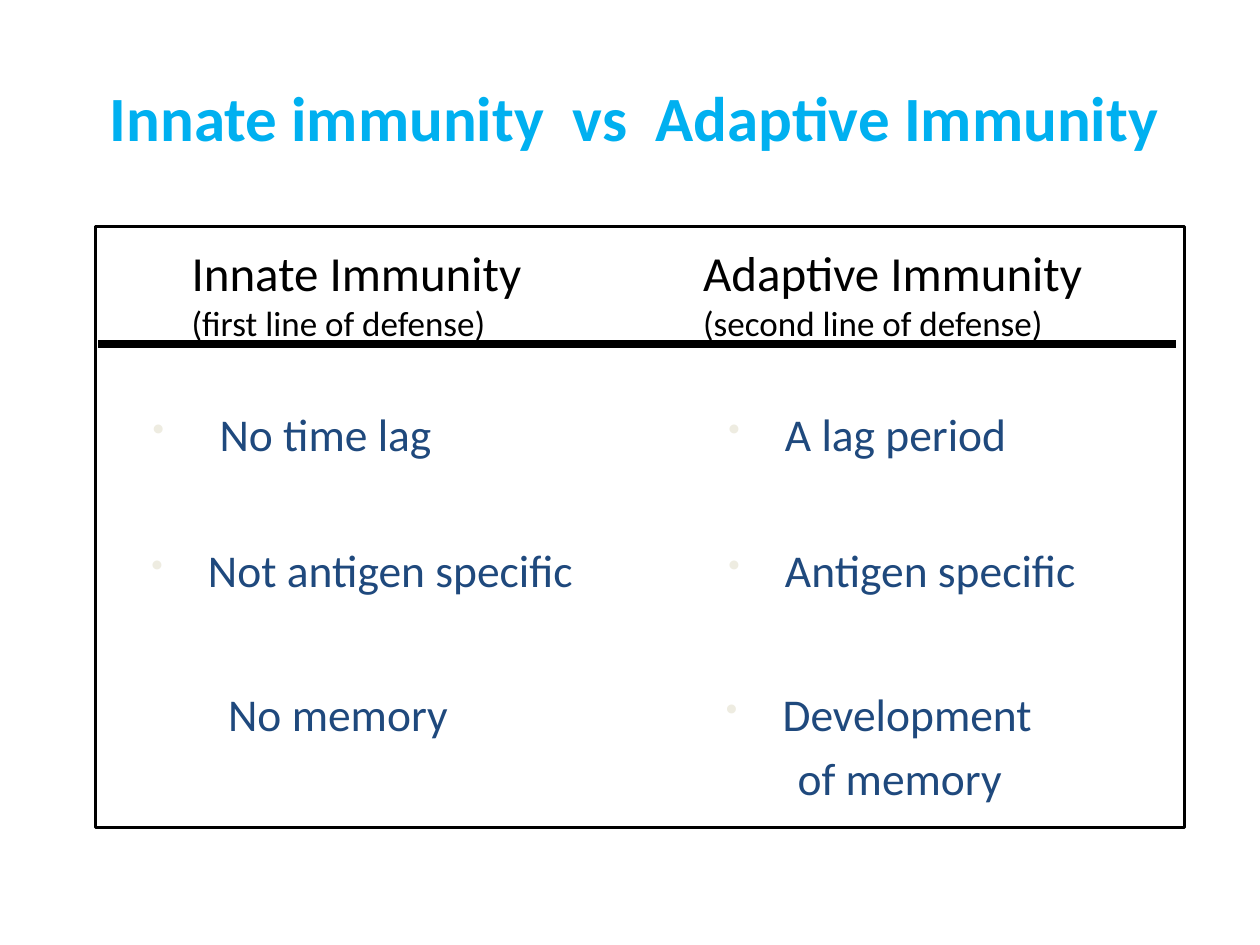
from pptx import Presentation
from pptx.dml.color import RGBColor
from pptx.enum.shapes import MSO_CONNECTOR as Connector, MSO_SHAPE as Shape
from pptx.enum.text import MSO_ANCHOR as Anchor, PP_ALIGN as Align
from pptx.oxml.ns import qn
from pptx.util import Pt
from lxml.etree import SubElement

BLACK, WHITE, NAVY, SKY, CREAM = "000000", "FFFFFF", "1F497D", "00B0F0", "EEECE1"


def color(hex_code):
    return RGBColor.from_string(hex_code)


def set_font(paragraph, size, hex_code, bold=False):
    font = paragraph.font
    font.name, font.size, font.bold = "Calibri", Pt(size), bold
    font.color.rgb = color(hex_code)


def set_indent(paragraph, indent, bulleted):
    properties = paragraph._p.get_or_add_pPr()
    properties.set("marL", str(Pt(indent)))
    properties.set("indent", str(Pt(-indent if bulleted else 0)))
    if bulleted:
        bullet_color = SubElement(properties, qn("a:buClr"))
        SubElement(bullet_color, qn("a:srgbClr"), val=CREAM)
        SubElement(properties, qn("a:buSzPct"), val="75000")
        SubElement(properties, qn("a:buChar"), char="•")


def add_text_area(slide, left, top, width, height):
    area = slide.shapes.add_textbox(Pt(left), Pt(top), Pt(width), Pt(height))
    frame = area.text_frame
    frame.word_wrap = True
    frame.margin_left = frame.margin_right = Pt(8)
    frame.margin_top = frame.margin_bottom = Pt(4)
    return area


def add_title(slide, left, top, width, height):
    title = add_text_area(slide, left, top, width, height)
    title.fill.solid()
    title.fill.fore_color.rgb = color(WHITE)
    title.text_frame.vertical_anchor = Anchor.MIDDLE
    heading = title.text_frame.paragraphs[0]
    heading.text = "Innate immunity  vs  Adaptive Immunity"
    heading.alignment = Align.CENTER
    set_font(heading, 36, SKY, True)


def add_panel(slide, left, top, width, height):
    border = slide.shapes.add_shape(Shape.RECTANGLE, Pt(left), Pt(top), Pt(width), Pt(height))
    border.shadow.inherit = False
    border.fill.solid()
    border.fill.fore_color.rgb = color(WHITE)
    border.line.color.rgb = color(BLACK)
    border.line.width = Pt(1.5)
    rule_y = Pt(top + 67)
    rule = slide.shapes.add_connector(
        Connector.STRAIGHT, Pt(left + 1.5), rule_y, Pt(left + width - 4.5), rule_y)
    rule.line.color.rgb = color(BLACK)
    rule.line.width = Pt(4.5)
    SubElement(rule._element.spPr, qn("a:effectLst"))


def add_column_heading(slide, left, top, width, height, name, role):
    frame = add_text_area(slide, left, top, width, height).text_frame
    frame.text = f"{name}\n{role}"
    for paragraph, size in zip(frame.paragraphs, (28, 20)):
        set_font(paragraph, size, BLACK)


def add_trait(slide, left, top, width, height, lines):
    frame = add_text_area(slide, left, top, width, height).text_frame
    frame.text = "\n".join(text for text, _, _ in lines)
    for number, (paragraph, (_, indent, bulleted)) in enumerate(zip(frame.paragraphs, lines)):
        if number:
            paragraph.space_before = Pt(5.2)
        set_indent(paragraph, indent, bulleted)
        set_font(paragraph, 26, NAVY)


def main():
    deck = Presentation()
    deck.slide_width, deck.slide_height = Pt(720), Pt(540)
    slide = deck.slides.add_slide(deck.slide_layouts[6])

    add_panel(slide, 54.7, 129.6, 622, 343.4)
    add_title(slide, 44.6, 21.6, 635.8, 90)
    add_column_heading(slide, 101.5, 134.6, 213, 67, "Innate Immunity", "(first line of defense)")
    add_column_heading(slide, 393.8, 134.6, 248, 67, "Adaptive Immunity", "(second line of defense)")

    row_tops = (228.2, 306, 388)
    innate = (
        (79.2, [("No time lag", 38.3, True)]),
        (78.5, [("Not antigen specific", 32.4, True)]),
        (81.4, [("No memory", 41, False)]),
    )
    adaptive = (
        (408.2, [("A lag period", 32.4, True)]),
        (408.2, [("Antigen specific", 32.4, True)]),
        (406.8, [("Development", 32.4, True), ("of memory", 41, False)]),
    )
    for column in (innate, adaptive):
        for top, (left, lines) in zip(row_tops, column):
            add_trait(slide, left, top, 266, 40 + 37 * (len(lines) - 1), lines)

    deck.save("out.pptx")


if __name__ == "__main__":
    main()
